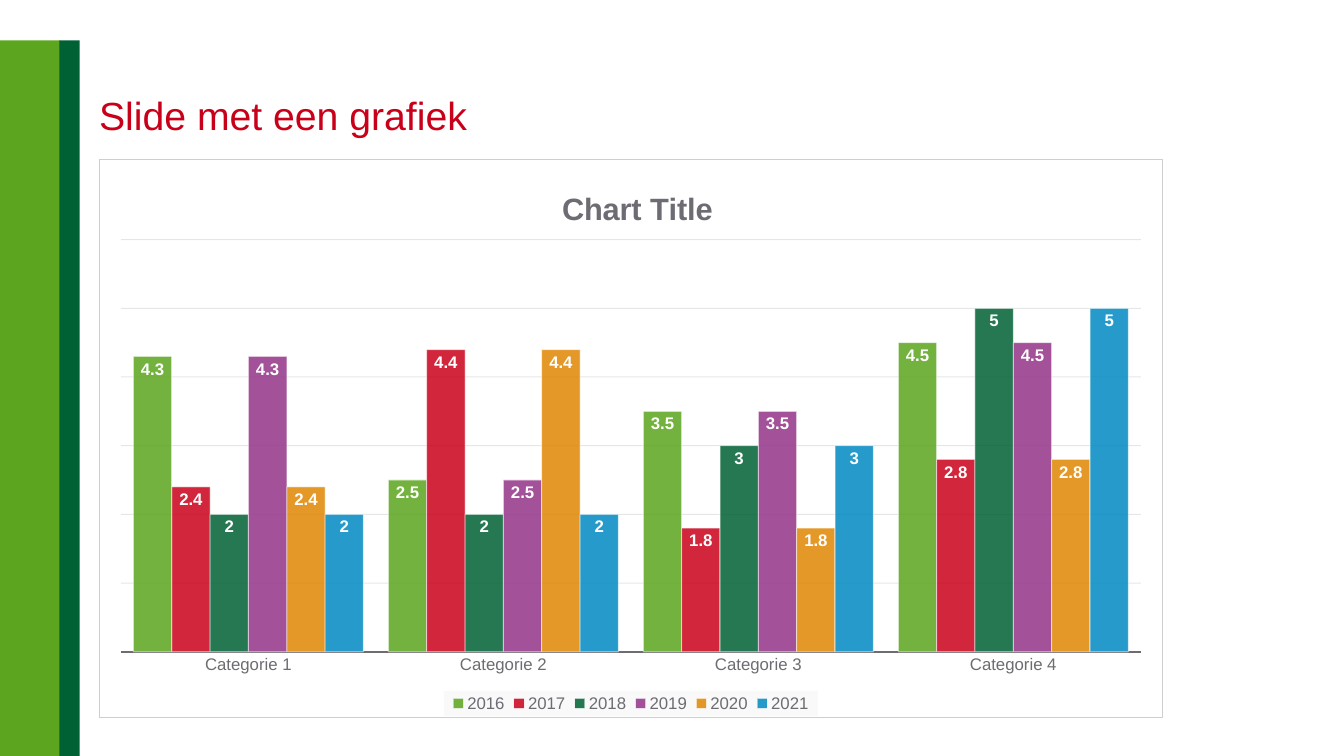
import pptx
import pptx.chart.data
import pptx.dml.color
import pptx.enum.chart
import pptx.enum.shapes
import pptx.enum.text
import pptx.oxml
import pptx.oxml.ns
import pptx.util
from lxml import etree

Cm, Pt = pptx.util.Cm, pptx.util.Pt
qn = pptx.oxml.ns.qn

COLORS = {
    "green": "5CA51E", "red": "C90019", "forest": "006134",
    "purple": "933489", "orange": "E08603", "blue": "008AC2",
    "white": "FFFFFF", "grey": "6E6B72", "ink": "3E3C40",
    "grid": "48454A", "border": "CFCDD0", "legend": "F2F2F2",
}
CATEGORIES = ["Categorie 1", "Categorie 2", "Categorie 3", "Categorie 4"]
# Year: (colour, values); the value pattern returns every three years
PATTERNS = [(4.3, 2.5, 3.5, 4.5), (2.4, 4.4, 1.8, 2.8), (2, 2, 3, 5)]
SERIES_COLORS = ["green", "red", "forest", "purple", "orange", "blue"]


def rgb(name):
    return pptx.dml.color.RGBColor.from_string(COLORS[name])


def style_font(font, size, color, bold=False):
    font.name, font.size, font.bold = "Arial", Pt(size), bold
    font.color.rgb = rgb(color)


def style_line(line, color, width, opacity=100):
    line.width = Pt(width)
    line.color.rgb = rgb(color)
    set_opacity(line.fill, opacity, line._get_or_add_ln())


def set_opacity(fill, percent, holder):
    if percent < 100:
        srgb = holder.find(qn("a:solidFill")).find(qn("a:srgbClr"))
        etree.SubElement(srgb, qn("a:alpha"), val=str(percent * 1000))


def place(parent, before, **fractions):
    """Fix the place of a chart part, in fractions of the chart."""
    for old in parent.findall(qn("c:layout")):
        parent.remove(old)
    layout = etree.Element(qn("c:layout"))
    manual = etree.SubElement(layout, qn("c:manualLayout"))
    if before is None:
        parent.insert(0, layout)
        etree.SubElement(manual, qn("c:layoutTarget"), val="inner")
    else:
        parent.find(qn(before)).addprevious(layout)
    for side in "xy":
        etree.SubElement(manual, qn(f"c:{side}Mode"), val="edge")
    for side, value in fractions.items():
        etree.SubElement(manual, qn(f"c:{side}"), val=str(value))


class SlideBuilder:
    def __init__(self, slide):
        self.shapes = slide.shapes

    def band(self, left, top, width, height, color):
        band = self.shapes.add_shape(
            pptx.enum.shapes.MSO_SHAPE.RECTANGLE,
            Cm(left), Cm(top), Cm(width), Cm(height))
        band.shadow.inherit = False
        band.fill.solid()
        band.fill.fore_color.rgb = rgb(color)
        band.line.fill.background()

    def heading(self, left, top, width, height, text):
        frame = self.shapes.add_textbox(
            Cm(left), Cm(top), Cm(width), Cm(height)).text_frame
        frame.word_wrap = True
        frame.vertical_anchor = pptx.enum.text.MSO_ANCHOR.BOTTOM
        frame.margin_left = frame.margin_right = 0
        frame.margin_top = frame.margin_bottom = 0
        paragraph = frame.paragraphs[0]
        paragraph.text = text
        paragraph.line_spacing = Pt(33)
        style_font(paragraph.font, 28, "red")

    def column_chart(self, left, top, width, height, title):
        data = pptx.chart.data.CategoryChartData()
        data.categories = CATEGORIES
        for index in range(len(SERIES_COLORS)):
            data.add_series(str(2016 + index), PATTERNS[index % len(PATTERNS)])
        chart = self.shapes.add_chart(
            pptx.enum.chart.XL_CHART_TYPE.COLUMN_CLUSTERED,
            Cm(left), Cm(top), Cm(width), Cm(height), data).chart
        style_font(chart.font, 10, "ink")
        self.chart_title(chart, title)
        self.axes(chart)
        self.columns(chart.plots[0])
        self.legend(chart)
        self.frame(chart)
        plot_area = chart._chartSpace.chart.plotArea
        place(plot_area, None, x=0.02, y=0.144, w=0.96, h=0.738)

    def chart_title(self, chart, text):
        chart.has_title = True
        title = chart.chart_title
        title.text_frame.text = text
        style_font(title.text_frame.paragraphs[0].font, 22, "grey", bold=True)
        title.include_in_layout = False
        place(title._element, "c:overlay", x=0.43, y=0.045)

    def axes(self, chart):
        none = pptx.enum.chart.XL_TICK_MARK.NONE
        categories, values = chart.category_axis, chart.value_axis
        categories.major_tick_mark = categories.minor_tick_mark = none
        style_font(categories.tick_labels.font, 12, "grey")
        style_line(categories.format.line, "grey", 1.5)
        values.visible = False
        values.minimum_scale, values.maximum_scale = 0, 6
        values.major_unit = 1
        values.has_major_gridlines = True
        style_line(values.major_gridlines.format.line, "grid", 0.75, 12)

    def columns(self, plot):
        plot.vary_by_categories = False
        plot.gap_width, plot.overlap = 65, 0
        for series, color in zip(plot.series, SERIES_COLORS):
            fill = series.format.fill
            fill.solid()
            fill.fore_color.rgb = rgb(color)
            set_opacity(fill, 85, series._element.spPr)
            style_line(series.format.line, "white", 0.75, 50)
            labels = series.data_labels
            labels.show_value = True
            labels.position = pptx.enum.chart.XL_LABEL_POSITION.INSIDE_END
            style_font(labels.font, 12, "white", bold=True)

    def legend(self, chart):
        chart.has_legend = True
        legend = chart.legend
        legend.position = pptx.enum.chart.XL_LEGEND_POSITION.BOTTOM
        legend.include_in_layout = False
        style_font(legend.font, 12, "grey")
        place(legend._element, "c:overlay", x=0.324, y=0.954, w=0.352, h=0.045)
        legend._element.find(qn("c:txPr")).addprevious(
            self.area("legend", 'alpha val="39000"', "<a:ln><a:noFill/></a:ln>"))

    def frame(self, chart):
        border = (f'<a:ln w="{Pt(0.75)}"><a:solidFill><a:srgbClr '
                  f'val="{COLORS["border"]}"/></a:solidFill></a:ln>')
        chart._chartSpace.chart.addnext(
            self.area("white", 'alpha val="100000"', border))

    def area(self, color, alpha, line):
        return pptx.oxml.parse_xml(
            f'<c:spPr {pptx.oxml.ns.nsdecls("c", "a")}><a:solidFill>'
            f'<a:srgbClr val="{COLORS[color]}"><a:{alpha}/></a:srgbClr>'
            f'</a:solidFill>{line}</c:spPr>')


def main():
    deck = pptx.Presentation()
    deck.slide_width, deck.slide_height = Cm(33.87), Cm(19.05)
    page = SlideBuilder(deck.slides.add_slide(deck.slide_layouts[6]))

    # Side bands
    page.band(0, 1.02, 1.52, 18.03, "green")
    page.band(1.5, 1.02, 0.51, 18.03, "forest")

    # Chart and heading
    page.column_chart(2.5, 4, 26.8, 14.1, "Chart Title")
    page.heading(2.5, 1, 26.92, 2.49, "Slide met een grafiek")

    deck.save("out.pptx")


if __name__ == "__main__":
    main()
